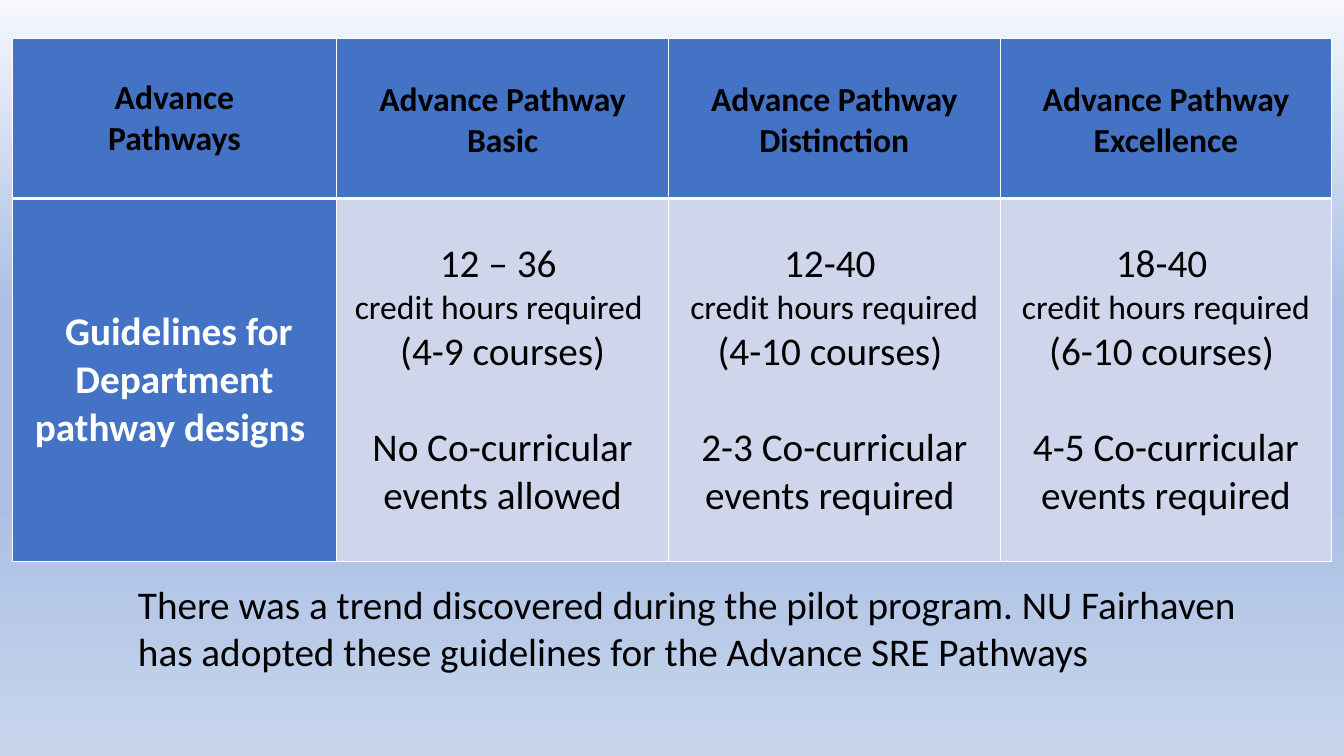
from pptx import Presentation
from pptx.dml.color import RGBColor
from pptx.enum.text import MSO_ANCHOR as Anchor, PP_ALIGN as Align
from pptx.oxml import parse_xml
from pptx.oxml.ns import nsdecls
from pptx.util import Inches, Pt

BLUE, PALE, BLACK, WHITE = "4472C4", "CFD5EA", "000000", "FFFFFF"
SKY = [(0, "F6F8FC"), (40, "ABC0E4"), (66, "ABC0E4"), (100, "C7D5ED")]
HEADERS = [
    ("Advance", "Pathways"),
    ("Advance Pathway", "Basic"),
    ("Advance Pathway", "Distinction"),
    ("Advance Pathway", "Excellence"),
]
GUIDELINES = [
    ("12 – 36 ", "credit hours required ", "(4-9 courses)",
     "No Co-curricular events allowed"),
    ("12-40 ", "credit hours required", "(4-10 courses) ",
     "2-3 Co-curricular events required "),
    ("18-40 ", "credit hours required", "(6-10 courses) ",
     "4-5 Co-curricular events required"),
]
GUIDELINE_SIZES = (28, 24, 28, 28)
EVENTS_GAP = 34.2


def color(value):
    return RGBColor.from_string(value)


def paint_background(page, stops):
    marks = "".join(
        f'<a:gs pos="{pos * 1000}"><a:srgbClr val="{value}"/></a:gs>'
        for pos, value in stops
    )
    page.element.cSld.insert(0, parse_xml(
        f'<p:bg {nsdecls("p", "a")}><p:bgPr><a:gradFill rotWithShape="1">'
        f'<a:gsLst>{marks}</a:gsLst><a:lin ang="5400000" scaled="0"/>'
        '</a:gradFill><a:effectLst/></p:bgPr></p:bg>'
    ))


def add_span(para, text, size, ink, bold=False):
    span = para.add_run()
    span.text = text
    span.font.name = "Calibri"
    span.font.size = Pt(size)
    span.font.bold = bold
    span.font.color.rgb = color(ink)


def add_borders(cell, bottom):
    properties = cell._tc.get_or_add_tcPr()
    widths = {"lnL": 1, "lnR": 1, "lnT": 1, "lnB": bottom}
    for index, (side, width) in enumerate(widths.items()):
        properties.insert(index, parse_xml(
            f'<a:{side} {nsdecls("a")} w="{Pt(width)}"><a:solidFill>'
            f'<a:srgbClr val="{WHITE}"/></a:solidFill></a:{side}>'
        ))


def fill_cell(cell, lines, sizes, fill, ink, bold, bottom=1):
    cell.fill.solid()
    cell.fill.fore_color.rgb = color(fill)
    cell.vertical_anchor = Anchor.MIDDLE
    cell.margin_left = cell.margin_right = Inches(0.04)
    cell.margin_top = cell.margin_bottom = 0
    frame = cell.text_frame
    for index, (line, size) in enumerate(zip(lines, sizes)):
        para = frame.add_paragraph() if index else frame.paragraphs[0]
        para.alignment = Align.CENTER
        add_span(para, line, size, ink, bold)
    add_borders(cell, bottom)


def add_pathway_table(page):
    table = page.shapes.add_table(
        2, 4, Inches(0.12), Inches(0.38), Inches(13.1), Inches(5.19)
    ).table
    for column, width in zip(table.columns, (3.22, 3.29, 3.29, 3.29)):
        column.width = Inches(width)
    for row, height in zip(table.rows, (1.59, 3.6)):
        row.height = Inches(height)
    for index, lines in enumerate(HEADERS):
        cell = table.cell(0, index)
        fill_cell(cell, lines, (24, 24), BLUE, BLACK, True, bottom=3)
        if index:
            cell.margin_top = Inches(0.04)
    title = " Guidelines for Department pathway designs "
    fill_cell(table.cell(1, 0), [title], [28], BLUE, WHITE, True)
    for index, lines in enumerate(GUIDELINES, 1):
        cell = table.cell(1, index)
        fill_cell(cell, lines, GUIDELINE_SIZES, PALE, BLACK, False)
        cell.text_frame.paragraphs[-1].space_before = Pt(EVENTS_GAP)


def add_note(page, text):
    box = page.shapes.add_textbox(
        Inches(1.27), Inches(5.71), Inches(11.38), Inches(1.04)
    )
    box.text_frame.word_wrap = True
    add_span(box.text_frame.paragraphs[0], text, 28, BLACK)


def main():
    deck = Presentation()
    deck.slide_width, deck.slide_height = Inches(13.33), Inches(7.5)
    page = deck.slides.add_slide(deck.slide_layouts[6])
    paint_background(page, SKY)
    add_pathway_table(page)
    add_note(
        page,
        "There was a trend discovered during the pilot program. NU Fairhaven "
        "has adopted these guidelines for the Advance SRE Pathways",
    )
    deck.save("out.pptx")


if __name__ == "__main__":
    main()
